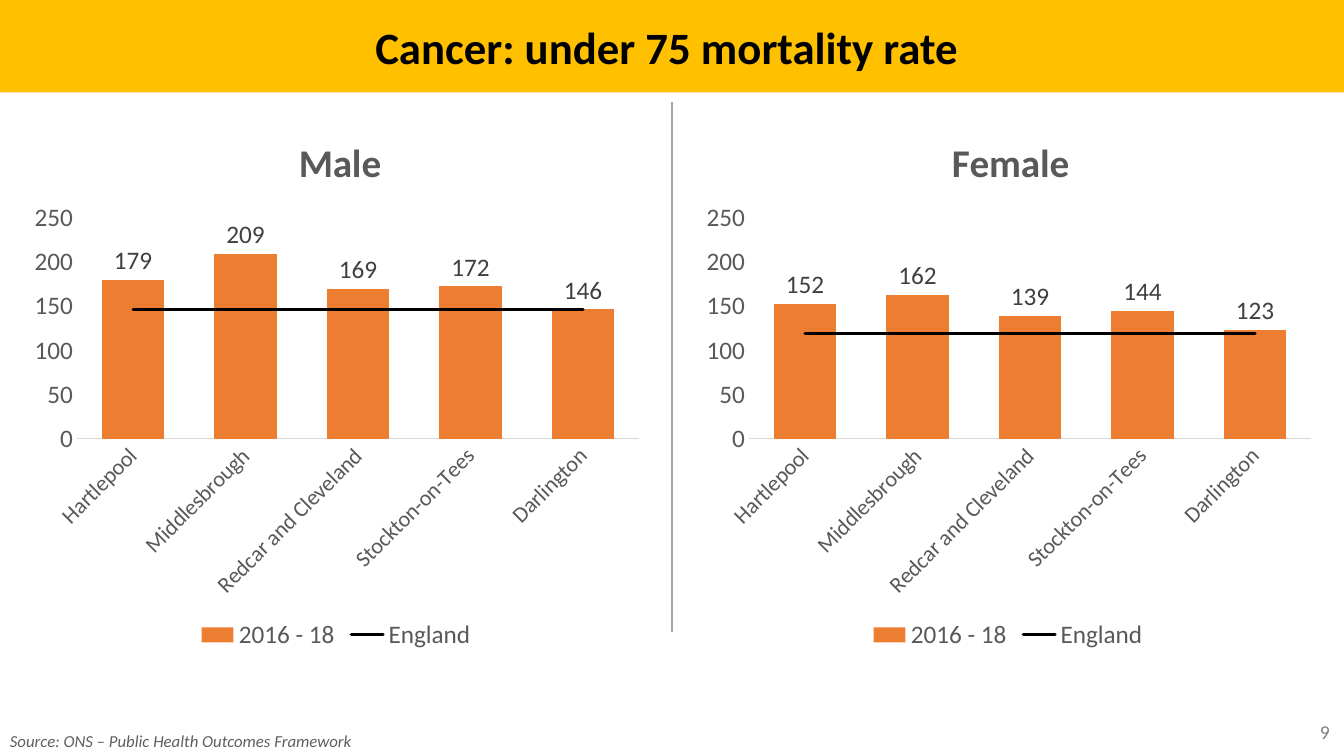
import pptx
import pptx.chart.data
import pptx.dml.color
import pptx.enum.chart
import pptx.enum.shapes
import pptx.enum.text
import pptx.oxml
import pptx.oxml.ns
import pptx.util

EMU_PER_PX = 9525
FONT = "Calibri"
COLOURS = {
    "banner": "FFC000",
    "title": "000000",
    "divider": "A5A5A5",
    "source": "5F5F5F",
    "number": "808080",
    "chart_text": "595959",
    "label": "404040",
    "axis": "D9D9D9",
    "area": "ED7D31",
    "england": "000000",
}
AREAS = ["Hartlepool", "Middlesbrough", "Redcar and Cleveland", "Stockton-on-Tees", "Darlington"]
ALIGN = pptx.enum.text.PP_ALIGN


def px(*lengths):
    return [pptx.util.Emu(length * EMU_PER_PX) for length in lengths]


def colour(name):
    return pptx.dml.color.RGBColor.from_string(COLOURS[name])


def style_font(font, size, colour_name, bold=False, italic=False):
    font.name = FONT
    font.size = pptx.util.Pt(size)
    font.bold = bold
    font.italic = italic
    font.color.rgb = colour(colour_name)


def write_text(frame, text, align=ALIGN.LEFT, **font_format):
    paragraph = frame.paragraphs[0]
    paragraph.alignment = align
    run = paragraph.add_run()
    run.text = text
    style_font(run.font, **font_format)


def add_text(slide, box, text, wrap=True, **text_format):
    frame = slide.shapes.add_textbox(*px(*box)).text_frame
    frame.word_wrap = wrap
    write_text(frame, text, **text_format)


def add_banner(slide, box, text):
    shape = slide.shapes.add_shape(pptx.enum.shapes.MSO_SHAPE.RECTANGLE, *px(*box))
    shape.shadow.inherit = False
    shape.fill.solid()
    shape.fill.fore_color.rgb = colour("banner")
    shape.line.fill.background()
    shape.text_frame.vertical_anchor = pptx.enum.text.MSO_ANCHOR.MIDDLE
    write_text(shape.text_frame, text, align=ALIGN.CENTER, size=32, colour_name="title", bold=True)


def add_divider(slide, x, top, bottom):
    line = slide.shapes.add_connector(
        pptx.enum.shapes.MSO_CONNECTOR.STRAIGHT, *px(x, top, x, bottom))
    line.line.color.rgb = colour("divider")
    line.line.width = pptx.util.Pt(2)
    properties = line._element.find(pptx.oxml.ns.qn("p:spPr"))
    properties.append(chart_xml("a:effectLst"))


def chart_xml(tag, content="", **attributes):
    listed = "".join(f' {key}="{value}"' for key, value in attributes.items())
    spaces = pptx.oxml.ns.nsdecls("c", "a")
    return pptx.oxml.parse_xml(f"<{tag} {spaces}{listed}>{content}</{tag}>")


def place(element, index, inner=False, **fractions):
    for layout in element.findall(pptx.oxml.ns.qn("c:layout")):
        element.remove(layout)
    target = '<c:layoutTarget val="inner"/>' if inner else ""
    modes = '<c:xMode val="edge"/><c:yMode val="edge"/>'
    values = "".join(f'<c:{key} val="{value}"/>' for key, value in fractions.items())
    content = f"<c:manualLayout>{target}{modes}{values}</c:manualLayout>"
    element.insert(index, chart_xml("c:layout", content))


def move_last_series_to_line(chart):
    bars = chart.element.find(".//" + pptx.oxml.ns.qn("c:barChart"))
    series = bars.findall(pptx.oxml.ns.qn("c:ser"))[-1]
    for bar_setting in series.findall(pptx.oxml.ns.qn("c:invertIfNegative")):
        series.remove(bar_setting)
    lines = chart_xml("c:lineChart", '<c:grouping val="standard"/><c:varyColors val="0"/>')
    lines.append(series)
    lines.append(chart_xml("c:marker", val="1"))
    for axis in bars.findall(pptx.oxml.ns.qn("c:axId")):
        lines.append(chart_xml("c:axId", val=axis.get("val")))
    bars.addnext(lines)


def style_axes(chart):
    none = pptx.enum.chart.XL_TICK_MARK.NONE
    for axis, size in ((chart.category_axis, 16), (chart.value_axis, 18)):
        axis.major_tick_mark = none
        axis.minor_tick_mark = none
        axis.has_major_gridlines = False
        style_font(axis.tick_labels.font, size, "chart_text")
    line = chart.category_axis.format.line
    line.color.rgb = colour("axis")
    line.width = pptx.util.Pt(0.75)
    body = chart.category_axis._element.find(".//" + pptx.oxml.ns.qn("a:bodyPr"))
    body.set("rot", "-2700000")
    body.set("vert", "horz")
    values = chart.value_axis
    values.format.line.fill.background()
    values.minimum_scale = 0
    values.maximum_scale = 250
    values.major_unit = 50
    values.tick_labels.number_format = "0"
    values.tick_labels.number_format_is_linked = False


def style_plots(chart):
    bars, lines = chart.plots
    bars.gap_width = 80
    bars.vary_by_categories = False
    fill = bars.series[0].format.fill
    fill.solid()
    fill.fore_color.rgb = colour("area")
    labels = bars.series[0].data_labels
    labels.show_value = True
    labels.number_format = "0"
    labels.number_format_is_linked = False
    labels.position = pptx.enum.chart.XL_LABEL_POSITION.OUTSIDE_END
    style_font(labels.font, 18, "label")
    england = lines.series[0]
    england.smooth = False
    england.marker.style = pptx.enum.chart.XL_MARKER_STYLE.NONE
    england.format.line.color.rgb = colour("england")
    england.format.line.width = pptx.util.Pt(2.25)
    outline = england._element.find(".//" + pptx.oxml.ns.qn("a:ln"))
    outline.set("cap", "rnd")


def add_rate_chart(slide, box, title, title_x, rates, england):
    data = pptx.chart.data.CategoryChartData(number_format="0")
    data.categories = AREAS
    data.add_series("2016 - 18", rates)
    data.add_series("England", [england] * len(AREAS))
    chart = slide.shapes.add_chart(
        pptx.enum.chart.XL_CHART_TYPE.COLUMN_CLUSTERED, *px(*box), data).chart
    style_font(chart.font, 18, "title")
    move_last_series_to_line(chart)
    style_plots(chart)
    style_axes(chart)
    chart.has_title = True
    write_text(chart.chart_title.text_frame, title, align=ALIGN.CENTER,
               size=28, colour_name="chart_text", bold=True)
    place(chart.chart_title._element, 1, x=title_x, y=0.05)
    plot_area = chart.element.find(".//" + pptx.oxml.ns.qn("c:plotArea"))
    place(plot_area, 0, inner=True, x=0.09, y=0.21, w=0.89, h=0.4)
    chart.has_legend = True
    chart.legend.position = pptx.enum.chart.XL_LEGEND_POSITION.BOTTOM
    chart.legend.include_in_layout = False
    style_font(chart.legend.font, 18, "chart_text")


def main():
    presentation = pptx.Presentation()
    presentation.slide_width, presentation.slide_height = px(1280, 720)
    slide = presentation.slides.add_slide(presentation.slide_layouts[6])
    add_text(slide, (988, 681, 288, 38), "9", align=ALIGN.RIGHT, size=14, colour_name="number")
    add_banner(slide, (0, 0, 1280, 88), "Cancer: under 75 mortality rate ")
    add_divider(slide, 640, 97, 602)
    add_text(slide, (0, 691, 348, 29), "Source: ONS – Public Health Outcomes Framework",
             wrap=False, size=12, colour_name="source", italic=True)
    charts = [
        ("Male", 0.43, [179, 209, 169, 172, 146], 146),
        ("Female", 0.4, [152, 162, 139, 144, 123], 119),
    ]
    for index, chart in enumerate(charts):
        add_rate_chart(slide, (19 + index * 640, 96, 602, 528), *chart)
    presentation.save("out.pptx")


if __name__ == "__main__":
    main()
